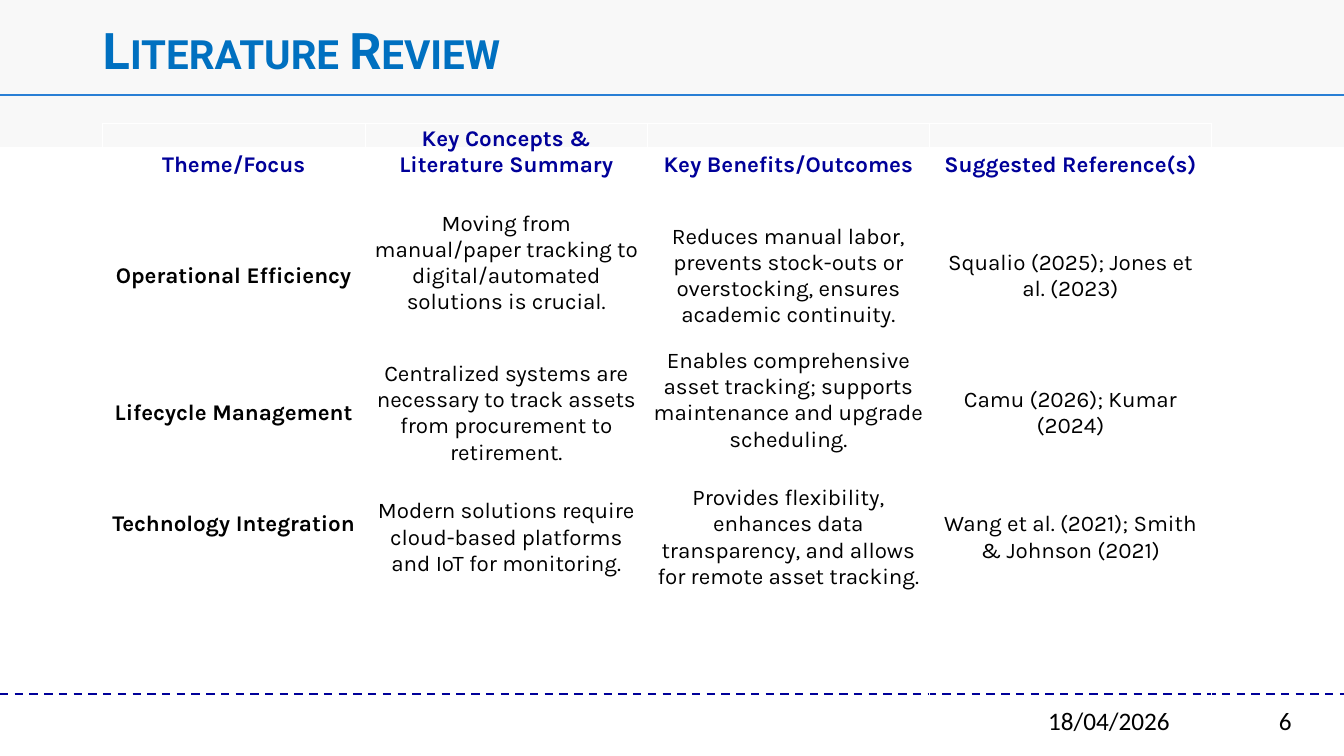
from lxml import etree
from pptx import Presentation
from pptx.dml.color import RGBColor
from pptx.enum.dml import MSO_LINE
from pptx.enum.shapes import MSO_CONNECTOR, MSO_SHAPE
from pptx.enum.text import MSO_ANCHOR, MSO_AUTO_SIZE, PP_ALIGN
from pptx.oxml.ns import qn
from pptx.util import Pt

DASH = MSO_LINE.DASH
STRAIGHT = MSO_CONNECTOR.STRAIGHT
RECT = MSO_SHAPE.RECTANGLE
MIDDLE = MSO_ANCHOR.MIDDLE
NO_FIT = MSO_AUTO_SIZE.NONE
LEFT, CENTER = PP_ALIGN.LEFT, PP_ALIGN.CENTER

WIDE, HIGH = 960, 540
NAVY, BLACK = "000099", "000000"
LINE = 18.7  # one line of table text

ROWS = [
    ["Theme/Focus", "Key Concepts & Literature Summary",
     "Key Benefits/Outcomes", "Suggested Reference(s)"],
    ["Operational Efficiency",
     "Moving from manual/paper tracking to digital/automated solutions is crucial.",
     "Reduces manual labor, prevents stock-outs or overstocking, ensures academic continuity.",
     "Squalio (2025); Jones et al. (2023)"],
    ["Lifecycle Management",
     "Centralized systems are necessary to track assets from procurement to retirement.",
     "Enables comprehensive asset tracking; supports maintenance and upgrade scheduling.",
     "Camu (2026); Kumar (2024)"],
    ["Technology Integration",
     "Modern solutions require cloud-based platforms and IoT for monitoring.",
     "Provides flexibility, enhances data transparency, and allows for remote asset tracking.",
     "Wang et al. (2021); Smith & Johnson (2021)"],
] + [[""] * 4] * 3
WIDTHS = [188, 201.5, 201.5, 201.5]
HEIGHTS = [60.5, 98, 98, 79.5, 53, 53, 53]
RAISED = {(0, 1), (1, 1), (2, 2), (3, 0)}  # cells set half a line above centre


def color(code):
    return RGBColor.from_string(code)


def style(font, code, **values):
    for name, value in values.items():
        setattr(font, name, value)
    font.color.rgb = color(code)


def rule(slide, y, code, weight, dash=None):
    line = slide.shapes.add_connector(STRAIGHT, 0, Pt(y), Pt(WIDE), Pt(y))
    line.line.color.rgb = color(code)
    line.line.width = Pt(weight)
    line.line.dash_style = dash
    etree.SubElement(line._element.spPr, qn("a:effectLst"))


def header(slide, text, height):
    band = slide.shapes.add_shape(RECT, 0, 0, Pt(WIDE), Pt(height))
    band.shadow.inherit = False
    band.fill.solid()
    band.fill.fore_color.rgb = color("F8F8F8")
    band.line.fill.background()
    rule(slide, 67.8, "297FD5", 1)

    title = slide.shapes.title
    slide.shapes._spTree.append(title._element)  # in front of the band
    place = dict(left=66.2, top=10.8, width=828, height=54.7)
    for name, value in place.items():
        setattr(title, name, Pt(value))
    frame = title.text_frame
    frame.text = text
    frame.auto_size = NO_FIT
    frame.vertical_anchor = MIDDLE
    para = frame.paragraphs[0]
    para.alignment = LEFT
    para.line_spacing = 0.9
    font = para.runs[0].font
    style(font, "0070C0", name="Roboto", size=Pt(36), bold=True)
    font._element.set("cap", "small")


def border(cell):
    """Draw thin white lines on all four sides, ahead of the cell's fill."""
    props = cell._tc.get_or_add_tcPr()
    for spot, side in enumerate(("lnL", "lnR", "lnT", "lnB")):
        line = etree.Element(qn("a:" + side), w=str(Pt(0.6)))
        fill = etree.SubElement(line, qn("a:solidFill"))
        etree.SubElement(fill, qn("a:srgbClr"), val="FFFFFF")
        props.insert(spot, line)


def review(slide, left, top):
    frame = slide.shapes.add_table(len(ROWS), len(WIDTHS), Pt(left), Pt(top),
                                   Pt(sum(WIDTHS)), Pt(sum(HEIGHTS)))
    table = frame.table
    table.horz_banding = False
    for col, width in zip(table.columns, WIDTHS):
        col.width = Pt(width)
    for row, height in zip(table.rows, HEIGHTS):
        row.height = Pt(height)
    for r, texts in enumerate(ROWS):
        for c, text in enumerate(texts):
            cell = table.cell(r, c)
            cell.fill.background()
            border(cell)
            cell.vertical_anchor = MIDDLE
            cell.margin_left = cell.margin_right = Pt(4.3)
            cell.margin_top = Pt(2.2)
            cell.margin_bottom = Pt(2.2 + LINE * ((r, c) in RAISED))
            cell.text = text
            para = cell.text_frame.paragraphs[0]
            para.alignment = CENTER
            style(para.font, BLACK if r else NAVY, name="Karla", size=Pt(16),
                  bold=r == 0 or c == 0)


def label(slide, text, left, top, width):
    box = slide.shapes.add_textbox(Pt(left), Pt(top), Pt(width), Pt(29))
    frame = box.text_frame
    frame.word_wrap = True
    frame.text = text
    style(frame.paragraphs[0].font, BLACK, name="Calibri", size=Pt(18))


def footer(slide, top):
    rule(slide, top, NAVY, 1.5, DASH)
    label(slide, "18/04/2026", 741.6, top + 4.4, 152)
    label(slide, "6", 906.5, top + 4.4, 40)


def main():
    deck = Presentation()
    deck.slide_width, deck.slide_height = Pt(WIDE), Pt(HIGH)
    slide = deck.slides.add_slide(deck.slide_layouts[5])
    footer(slide, 496)
    header(slide, "Literature Review", 105)
    review(slide, 72.9, 87.8)
    deck.save("out.pptx")


if __name__ == "__main__":
    main()
